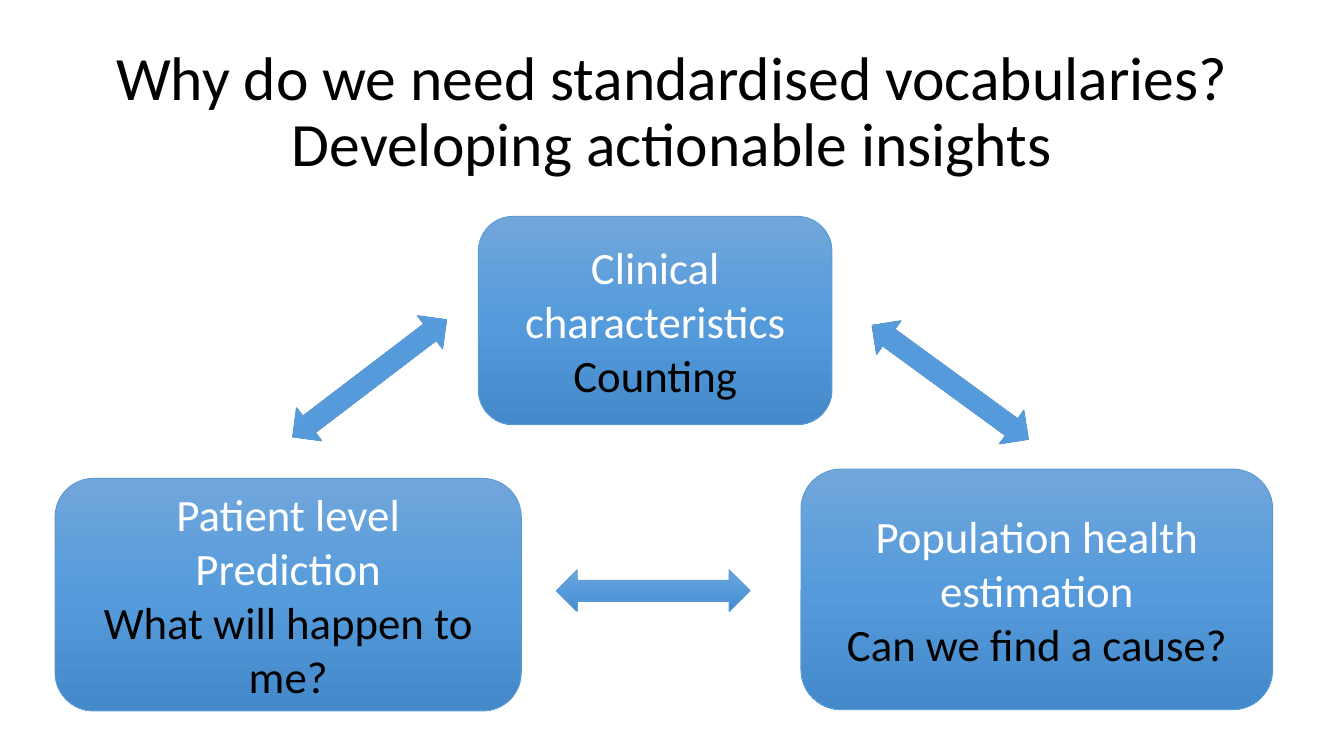
from copy import deepcopy
from pptx import Presentation
from pptx.dml.color import RGBColor
from pptx.enum import shapes, text
from pptx.util import Pt

HUES = {"top": "71A6DB", "mid": "559BDB", "low": "448ACA",
        "edge": "5B9BD5", "light": "FFFFFF", "dark": "000000"}
FONT = "Calibri"
TITLE = ["Why do we need standardised vocabularies?",
         "Developing actionable insights"]
BOXES = [
    ((256.3, 115.9, 189.4, 111.6), ["Clinical characteristics"], "Counting"),
    ((429.1, 251.3, 252.7, 128.9), ["Population health estimation"],
     "Can we find a cause?"),
    ((29.5, 256.3, 249.8, 124.6), ["Patient level", "Prediction"],
     "What will happen to me?"),
]
ARROWS = [(146.2, 191.5, 322.7), (457.2, 193.7, 36.1), (298.1, 305.3, 0)]
LONG, THICK = 103.7, 22.3


def hue(name):
    return RGBColor.from_string(HUES[name])


def write(para, words, size, tone):
    para.alignment = text.PP_ALIGN.CENTER
    run = para.add_run()
    run.text = words
    run.font.name = FONT
    run.font.size = Pt(size)
    run.font.color.rgb = hue(tone)


def inset(frame):
    frame.word_wrap = True
    frame.vertical_anchor = text.MSO_ANCHOR.MIDDLE
    frame.margin_left = frame.margin_right = Pt(5.3)
    frame.margin_top = frame.margin_bottom = Pt(2.7)


def draw(kind, area):
    shape = slide.shapes.add_shape(kind, *map(Pt, area))
    shape.shadow.inherit = False
    fill = shape.fill
    fill.gradient()
    fill.gradient_angle = 270
    stops = fill._fill._gradFill.gsLst
    stops.insert(1, deepcopy(stops[0]))
    for stop, name, place in zip(fill.gradient_stops,
                                 ("top", "mid", "low"), (0, 0.5, 1)):
        stop.color.rgb = hue(name)
        stop.position = place
    shape.line.color.rgb = hue("edge")
    shape.line.width = Pt(0.5)
    return shape


deck = Presentation()
deck.slide_width, deck.slide_height = Pt(720), Pt(405)
slide = deck.slides.add_slide(deck.slide_layouts[5])

title = slide.shapes.title
title.left, title.top, title.width, title.height = map(
    Pt, (49.5, 21.6, 621, 78.3))
inset(title.text_frame)
title.text_frame.auto_size = text.MSO_AUTO_SIZE.NONE
head = title.text_frame.paragraphs[0]
head.line_spacing = 0.9
for i, words in enumerate(TITLE):
    if i:
        head.add_line_break()
    write(head, words, 33, "dark")

for area, names, note in BOXES:
    frame = draw(shapes.MSO_SHAPE.ROUNDED_RECTANGLE, area).text_frame
    inset(frame)
    lines = [(name, "light") for name in names] + [(note, "dark")]
    for i, (words, tone) in enumerate(lines):
        para = frame.add_paragraph() if i else frame.paragraphs[0]
        write(para, words, 24, tone)

for left, top, turn in ARROWS:
    arrow = draw(shapes.MSO_SHAPE.LEFT_RIGHT_ARROW, (left, top, LONG, THICK))
    arrow.rotation = turn

deck.save("out.pptx")
